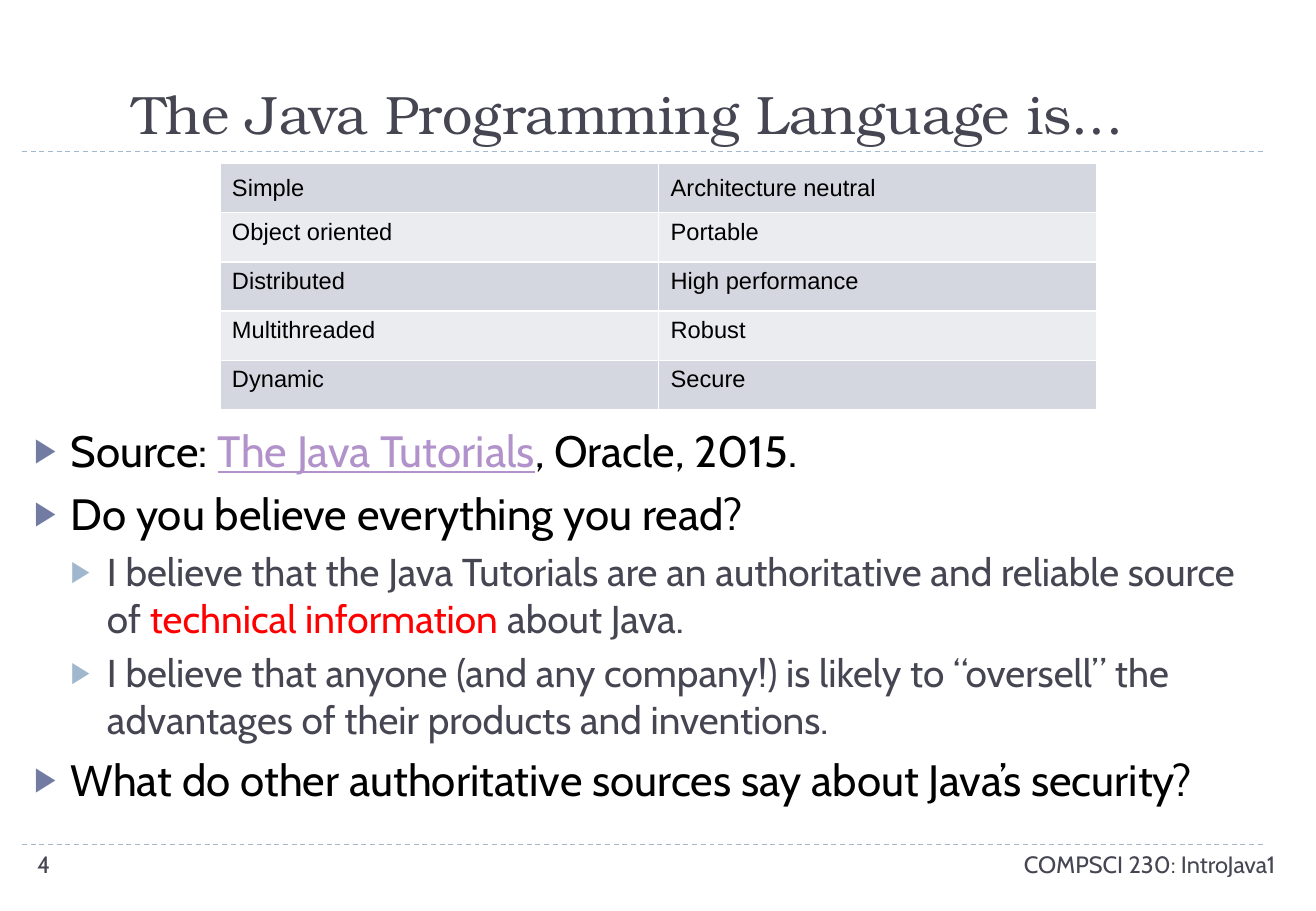
"""Build the slide on the qualities of the Java programming language."""
from lxml import etree
from pptx import Presentation
from pptx.dml.color import RGBColor
from pptx.enum import dml, shapes, text
from pptx.oxml import ns
from pptx.util import Pt

TITLE = "The Java Programming Language is..."
QUALITIES = [
    ("Simple", "Architecture neutral"),
    ("Object oriented", "Portable"),
    ("Distributed", "High performance"),
    ("Multithreaded", "Robust"),
    ("Dynamic", "Secure"),
]
BLACK, SLATE, RED, LILAC = "000000", "464653", "FF0000", "B292CA"
RULE_COLOUR = "9FB8CD"
POINTS = [
    (0, [("Source: ", BLACK), ("The Java Tutorials", LILAC), (", Oracle, 2015.", BLACK)]),
    (0, [("Do you believe everything you read?", BLACK)]),
    (1, [("I believe that the Java Tutorials are an authoritative and reliable source of ", SLATE),
         ("technical information ", RED), ("about Java.", SLATE)]),
    (1, [("I believe that anyone (and any company!) is likely to “oversell” the "
          "advantages of their products and inventions.", SLATE)]),
    (0, [("What do other authoritative sources say about Java’s security?", BLACK)]),
]
LEVELS = [
    {"size": 26, "before": 6, "bullet": "727CA3"},
    {"size": 23, "before": 5, "bullet": RULE_COLOUR},
]
FOOTERS = [
    ("4", 15, 169, text.PP_ALIGN.LEFT),
    ("COMPSCI 230: IntroJava1", 568, 195, text.PP_ALIGN.RIGHT),
]
BANDS = ["D5D7E0", "EBECF0"]
RULE_LEFT, RULE_RIGHT = 13, 750
TITLE_RULE, FOOTER_RULE = 90, 500.4
INDENT = 21.6


def colour(value):
    return RGBColor.from_string(value)


def apply(target, values):
    for name, value in values.items():
        setattr(target, name, value)


def place(shape, left, top, width, height):
    apply(shape, {"left": Pt(left), "top": Pt(top), "width": Pt(width), "height": Pt(height)})


def write(para, words, face, size, shade, **extra):
    span = para.add_run()
    span.text = words
    apply(span.font, {"name": face, "size": Pt(size), "bold": False, **extra})
    span.font.color.rgb = colour(shade)


def add_rule(page, top):
    rule = page.shapes.add_connector(
        shapes.MSO_CONNECTOR.STRAIGHT, Pt(RULE_LEFT), Pt(top), Pt(RULE_RIGHT), Pt(top))
    rule.line.color.rgb = colour(RULE_COLOUR)
    apply(rule.line, {"width": Pt(0.75), "dash_style": dml.MSO_LINE.DASH})
    etree.SubElement(rule._element.spPr, ns.qn("a:effectLst"))


def add_bullet(para, level, shade):
    props = para._p.get_or_add_pPr()
    props.set("marL", str(Pt(INDENT * (level + 1))))
    props.set("indent", str(-Pt(INDENT)))
    bullet_colour = etree.SubElement(props, ns.qn("a:buClr"))
    for parent, tag, attributes in [
        (bullet_colour, "a:srgbClr", {"val": shade}),
        (props, "a:buSzPct", {"val": "76000"}),
        (props, "a:buFont", {"typeface": "Arial"}),
        (props, "a:buChar", {"char": "▶"}),
    ]:
        etree.SubElement(parent, ns.qn(tag), attributes)


def fill_title(box):
    place(box, 71.3, 12.2, 687.6, 77.8)
    apply(box.text_frame, {"vertical_anchor": text.MSO_ANCHOR.BOTTOM, "word_wrap": True,
                           "auto_size": text.MSO_AUTO_SIZE.NONE})
    para = box.text_frame.paragraphs[0]
    para.alignment = text.PP_ALIGN.LEFT
    write(para, TITLE, "TeX Gyre Bonum", 32, SLATE)


def fill_body(box):
    place(box, RULE_LEFT, 247.7, 746, 250.6)
    frame = box.text_frame
    apply(frame, {"vertical_anchor": text.MSO_ANCHOR.TOP, "word_wrap": True,
                  "auto_size": text.MSO_AUTO_SIZE.NONE})
    for index, (level, spans) in enumerate(POINTS):
        para = frame.add_paragraph() if index else frame.paragraphs[0]
        style = LEVELS[level]
        add_bullet(para, level, style["bullet"])
        apply(para, {"level": level, "space_before": Pt(style["before"] if index else 0)})
        for words, shade in spans:
            write(para, words, "Cabin", style["size"], shade, underline=shade == LILAC)


def add_qualities(page):
    table = page.shapes.add_table(
        len(QUALITIES), 2, Pt(130.3), Pt(96.8), Pt(520), Pt(146)).table
    apply(table, {"first_row": False, "horz_banding": False})
    for row, pair in enumerate(QUALITIES):
        for column, words in enumerate(pair):
            cell = table.cell(row, column)
            cell.fill.solid()
            cell.fill.fore_color.rgb = colour(BANDS[row % 2])
            cell.vertical_anchor = text.MSO_ANCHOR.TOP if row else text.MSO_ANCHOR.MIDDLE
            write(cell.text_frame.paragraphs[0], words, "Arial", 14, BLACK)


def add_footer(page, words, left, width, alignment):
    box = page.shapes.add_textbox(Pt(left), Pt(FOOTER_RULE), Pt(width), Pt(28.8))
    box.text_frame.word_wrap = True
    para = box.text_frame.paragraphs[0]
    para.alignment = alignment
    write(para, words, "Cabin", 14, SLATE)


def main():
    deck = Presentation()
    apply(deck, {"slide_width": Pt(780), "slide_height": Pt(540)})
    page = deck.slides.add_slide(deck.slide_layouts[1])
    for top in (TITLE_RULE, FOOTER_RULE):
        add_rule(page, top)
    fill_title(page.shapes.title)
    fill_body(page.placeholders[1])
    add_qualities(page)
    for footer in FOOTERS:
        add_footer(page, *footer)
    deck.save("out.pptx")


if __name__ == "__main__":
    main()
